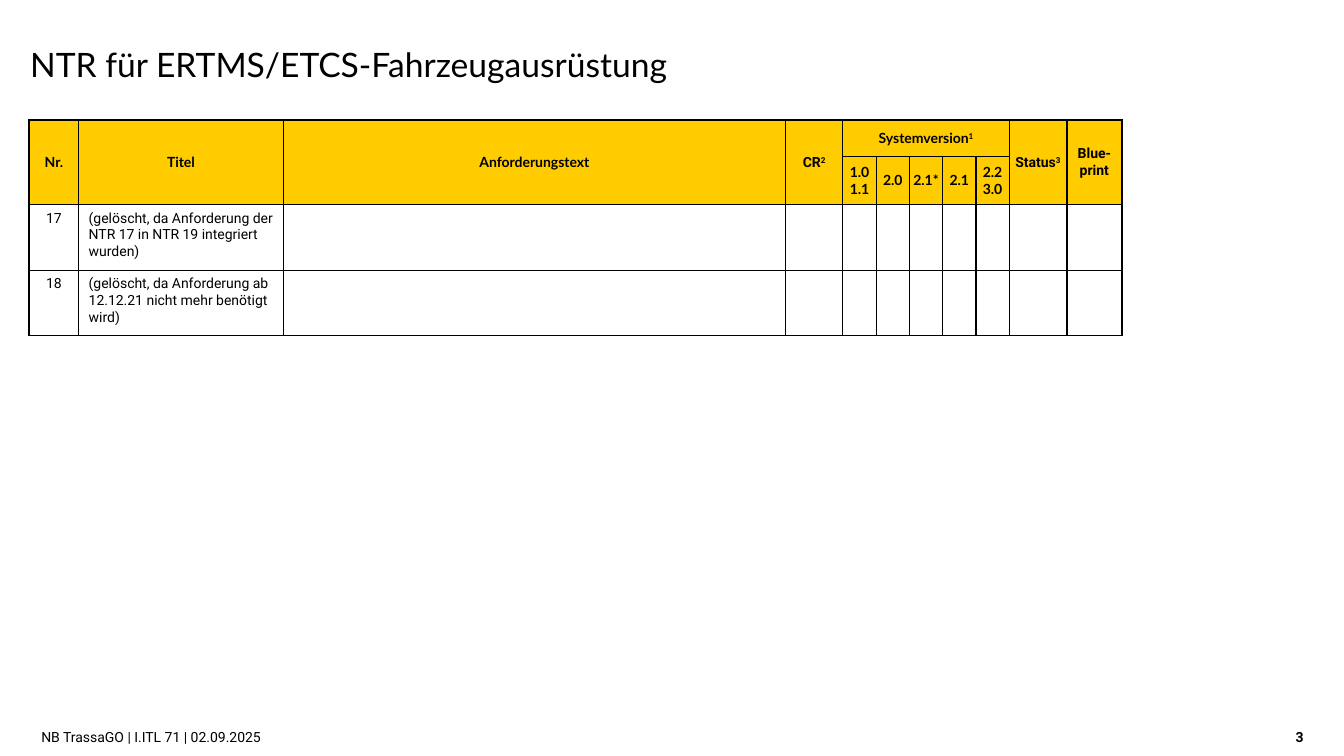
from dataclasses import dataclass

from lxml.etree import SubElement
from pptx import Presentation
from pptx.dml.color import RGBColor
from pptx.enum.text import MSO_ANCHOR, PP_ALIGN
from pptx.oxml.ns import qn
from pptx.util import Inches, Pt


@dataclass(frozen=True)
class Theme:
    """Colours, fonts and type sizes of the slide."""
    ink: str = "000000"
    header: str = "FFCC00"
    paper: str = "FFFFFF"
    heading_font: str = "Lato"
    body_font: str = "Roboto"
    title_size: int = 24
    text_size: int = 10
    line_spacing: int = 12
    thin: float = 1
    thick: float = 1.5


THEME = Theme()
COLUMN_WIDTHS = [0.49, 2.03, 4.98, 0.57] + [0.33] * 5 + [0.57, 0.55]
ROW_HEIGHTS = [0.36, 0.48, 0.65, 0.65]
STATUS_COLUMN, LAST_COLUMN = 9, 10
TIGHT_COLUMNS = range(4, 11)
ROBOTO_HEADERS = {3, 9, 10}
MERGES = [((0, column), (1, column)) for column in (0, 1, 2, 3, 9, 10)] + [((0, 4), (0, 8))]
HEADERS = {
    (0, 0): "Nr.", (0, 1): "Titel", (0, 2): "Anforderungstext", (0, 3): "CR^2",
    (0, 4): "Systemversion^1", (0, 9): "Status^3", (0, 10): "Blue-print",
    (1, 4): "1.0\n1.1", (1, 5): "2.0", (1, 6): "2.1*", (1, 7): "2.1", (1, 8): "2.2 3.0",
}
REQUIREMENTS = {
    (2, 0): "17",
    (2, 1): "(gelöscht, da Anforderung der NTR 17 in NTR 19 integriert wurden)",
    (3, 0): "18",
    (3, 1): "(gelöscht, da Anforderung ab 12.12.21 nicht mehr benötigt wird)",
}


def set_values(target, values):
    """Set each named attribute on the target."""
    for name, value in values.items():
        setattr(target, name, value)


def add_run(paragraph, text, font_name, size, bold=False):
    """Append a formatted run to the paragraph."""
    run = paragraph.add_run()
    run.text = text
    set_values(run.font, {"name": font_name, "size": Pt(size), "bold": bold})
    run.font.color.rgb = RGBColor.from_string(THEME.ink)
    return run


def prepare_frame(shape, anchor):
    """Remove the margins and set wrapping and anchor."""
    frame = shape.text_frame
    set_values(frame, {
        "margin_left": 0, "margin_top": 0, "margin_right": 0, "margin_bottom": 0,
        "word_wrap": True, "vertical_anchor": anchor,
    })
    return frame.paragraphs[0]


def place_title(slide, text):
    """Position the title placeholder and fill it."""
    title = slide.shapes.title
    set_values(title, {"left": Inches(0.3), "top": Inches(0.44),
                       "width": Inches(10.32), "height": Inches(0.71)})
    paragraph = prepare_frame(title, MSO_ANCHOR.TOP)
    paragraph.alignment = PP_ALIGN.LEFT
    add_run(paragraph, text, THEME.heading_font, THEME.title_size)


def add_footer(slide, text, left, width, alignment, bold=False):
    """Add one text box on the footer line."""
    box = slide.shapes.add_textbox(Inches(left), Inches(7.15), Inches(width), Inches(0.24))
    paragraph = prepare_frame(box, MSO_ANCHOR.BOTTOM)
    paragraph.alignment = alignment
    add_run(paragraph, text, THEME.body_font, THEME.text_size, bold)


def set_borders(cell, row, column):
    """Draw thick outer and status borders and thin inner ones."""
    thick_sides = {
        "a:lnL": column in (0, LAST_COLUMN),
        "a:lnR": column in (STATUS_COLUMN, LAST_COLUMN),
        "a:lnT": row == 0,
        "a:lnB": False,
    }
    properties = cell._tc.get_or_add_tcPr()
    for side, thick in thick_sides.items():
        width = Pt(THEME.thick if thick else THEME.thin)
        line = SubElement(properties, qn(side), w=str(int(width)))
        fill = SubElement(line, qn("a:solidFill"))
        SubElement(fill, qn("a:srgbClr"), val=THEME.ink)


def write_cell(cell, text, font_name, bold, alignment):
    """Write the paragraphs of a cell, raising what follows a caret."""
    cell.text_frame.text = text
    for paragraph in cell.text_frame.paragraphs:
        base, _, note = paragraph.text.partition("^")
        paragraph.clear()
        paragraph.alignment = alignment
        paragraph.line_spacing = Pt(THEME.line_spacing)
        paragraph.font.size = Pt(THEME.text_size)
        if base:
            add_run(paragraph, base, font_name, THEME.text_size, bold)
        if note:
            run = add_run(paragraph, note, font_name, THEME.text_size, bold)
            run.font._element.set("baseline", "30000")


def format_cell(cell, row, column):
    """Give a cell its margins, borders, fill and text."""
    is_header = row < 2
    side = Inches(0.01 if is_header and column in TIGHT_COLUMNS else 0.1)
    set_values(cell, {
        "margin_left": side, "margin_right": side,
        "margin_top": Inches(0.05), "margin_bottom": Inches(0.05),
        "vertical_anchor": MSO_ANCHOR.MIDDLE if is_header else MSO_ANCHOR.TOP,
    })
    set_borders(cell, row, column)
    cell.fill.solid()
    cell.fill.fore_color.rgb = RGBColor.from_string(THEME.header if is_header else THEME.paper)
    use_heading = is_header and not (row == 0 and column in ROBOTO_HEADERS)
    font_name = THEME.heading_font if use_heading else THEME.body_font
    alignment = PP_ALIGN.CENTER if is_header or column != 1 else PP_ALIGN.LEFT
    texts = HEADERS if is_header else REQUIREMENTS
    write_cell(cell, texts.get((row, column), ""), font_name, is_header, alignment)


def add_requirements_table(slide):
    """Add the table of requirements."""
    frame = slide.shapes.add_table(
        len(ROW_HEIGHTS), len(COLUMN_WIDTHS), Inches(0.29), Inches(1.19),
        Inches(sum(COLUMN_WIDTHS)), Inches(sum(ROW_HEIGHTS)))
    table = frame.table
    set_values(table, {"first_row": False, "horz_banding": False})
    for column, width in zip(table.columns, COLUMN_WIDTHS):
        column.width = Inches(width)
    for row, height in zip(table.rows, ROW_HEIGHTS):
        row.height = Inches(height)
    for row in range(len(ROW_HEIGHTS)):
        for column in range(len(COLUMN_WIDTHS)):
            format_cell(table.cell(row, column), row, column)
    for first, last in MERGES:
        table.cell(*first).merge(table.cell(*last))


def main():
    """Build and save the presentation."""
    presentation = Presentation()
    set_values(presentation, {"slide_width": Inches(13.33), "slide_height": Inches(7.5)})
    slide = presentation.slides.add_slide(presentation.slide_layouts[5])
    place_title(slide, "NTR für ERTMS/ETCS-Fahrzeugausrüstung")
    add_requirements_table(slide)
    add_footer(slide, "NB TrassaGO | I.ITL 71 | 02.09.2025", 0.41, 11.6, PP_ALIGN.LEFT)
    add_footer(slide, "3", 12.36, 0.57, PP_ALIGN.RIGHT, bold=True)
    presentation.save("out.pptx")


if __name__ == "__main__":
    main()
